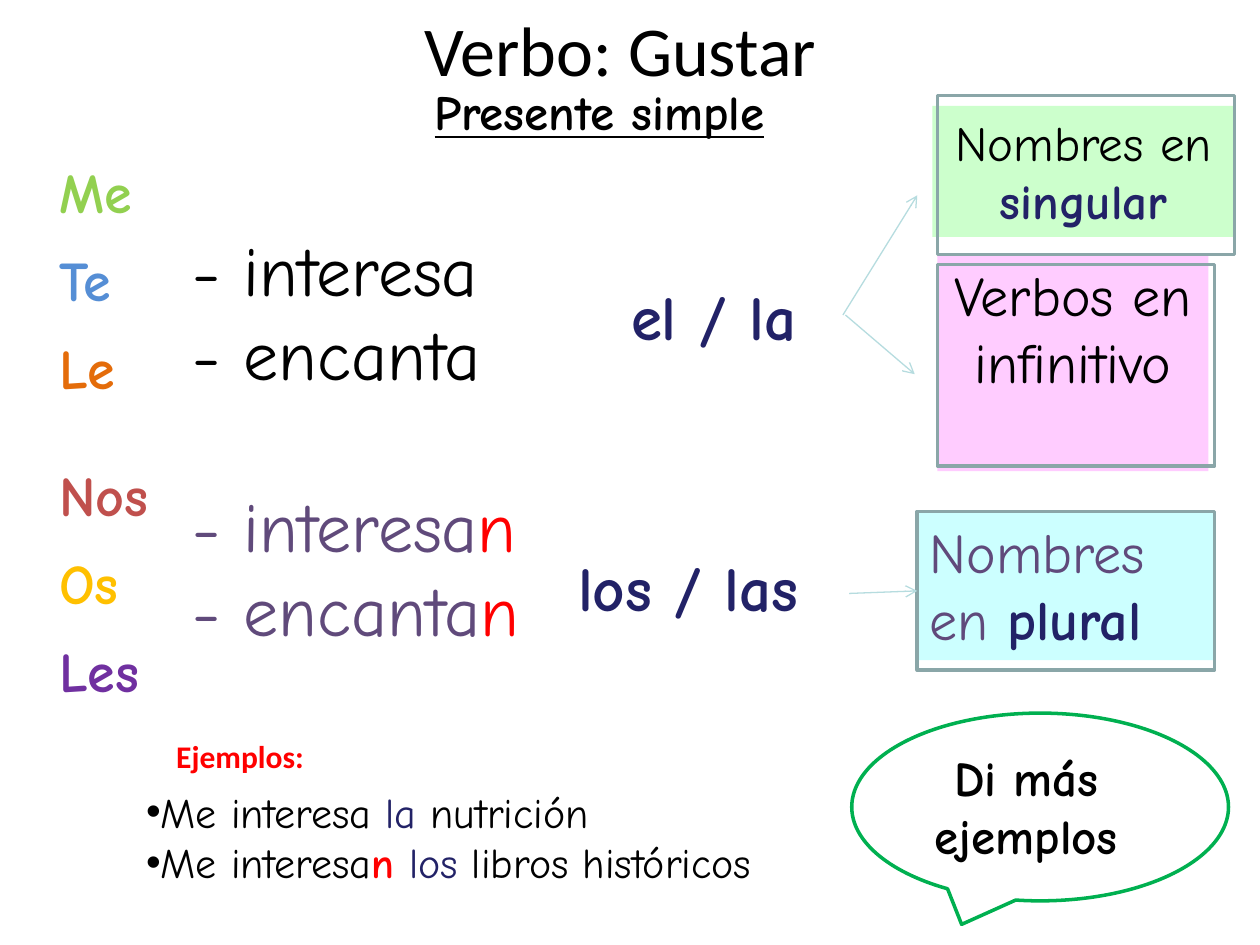
from dataclasses import dataclass

from lxml.etree import SubElement
from pptx import Presentation
from pptx.dml.color import RGBColor
from pptx.enum.shapes import MSO_CONNECTOR, MSO_SHAPE
from pptx.enum.text import MSO_ANCHOR, MSO_AUTO_SIZE, PP_ALIGN
from pptx.oxml.ns import qn
from pptx.util import Inches, Pt


@dataclass(frozen=True)
class Theme:
    heading_font: str = "Calibri"
    body_font: str = "Comic Neue"
    black: str = "000000"
    navy: str = "222267"
    purple: str = "604A7B"
    red: str = "FF0000"
    green: str = "00B050"
    frame: str = "8AA6A8"
    arrow: str = "B6DCDF"
    mint: str = "CCFFCC"
    pink: str = "FFCCFF"
    aqua: str = "CCFFFF"
    display: int = 40
    large: int = 36
    medium: int = 32
    small: int = 28
    example: int = 24
    label: int = 18


class SlideBuilder:
    """Holds the theme and the current slide."""

    def __init__(self, slide, theme):
        self.slide = slide
        self.theme = theme

    def fill_text(self, shape, paragraphs, size, font=None, bold=False,
                  wrap=False, align=PP_ALIGN.LEFT):
        """Each paragraph is a list of (text, colour[, bold]) runs."""
        frame = shape.text_frame
        frame.word_wrap = wrap
        frame.auto_size = MSO_AUTO_SIZE.NONE
        frame.vertical_anchor = MSO_ANCHOR.TOP
        for index, runs in enumerate(paragraphs):
            paragraph = frame.add_paragraph() if index else frame.paragraphs[0]
            paragraph.alignment = align
            paragraph.space_before = Pt(0)
            paragraph.font.name = font or self.theme.body_font
            paragraph.font.size = Pt(size)
            paragraph.font.bold = bold
            for text, color, *strong in runs:
                run = paragraph.add_run()
                run.text = text
                run.font.color.rgb = RGBColor.from_string(color)
                if strong:
                    run.font.bold = strong[0]
        return frame.paragraphs

    def placeholder(self, shape, box, paragraphs, size, **style):
        shape.left, shape.top, shape.width, shape.height = map(Inches, box)
        return self.fill_text(shape, paragraphs, size, **style)

    def text(self, box, paragraphs, size, **style):
        shape = self.slide.shapes.add_textbox(*map(Inches, box))
        return self.fill_text(shape, paragraphs, size, **style)

    def shape(self, box, fill=None, line=None, kind=MSO_SHAPE.RECTANGLE):
        shape = self.slide.shapes.add_shape(kind, *map(Inches, box))
        shape.shadow.inherit = False
        if fill:
            shape.fill.solid()
            shape.fill.fore_color.rgb = RGBColor.from_string(fill)
        else:
            shape.fill.background()
        if line:
            shape.line.color.rgb = RGBColor.from_string(line)
            shape.line.width = Pt(2)
        else:
            shape.line.fill.background()
        return shape

    def card(self, box, fill, runs, size, align=PP_ALIGN.CENTER):
        self.fill_text(self.shape(box, fill), [runs], size, wrap=True, align=align)

    def arrow(self, start, end, target=None):
        connector = self.slide.shapes.add_connector(
            MSO_CONNECTOR.STRAIGHT, *map(Inches, start + end))
        if target is not None:
            connector.end_connect(target, 1)
        connector.line.color.rgb = RGBColor.from_string(self.theme.arrow)
        connector.line.width = Pt(0.75)
        properties = connector._element.spPr
        SubElement(properties.find(qn("a:ln")), qn("a:tailEnd"), type="arrow")
        SubElement(properties, qn("a:effectLst"))


def main():
    presentation = Presentation()
    presentation.slide_width, presentation.slide_height = Inches(10), Inches(7.5)
    slide = presentation.slides.add_slide(presentation.slide_layouts[1])
    theme = Theme()
    builder = SlideBuilder(slide, theme)

    # Title and subtitle
    builder.placeholder(slide.shapes.title, (3.27, 0, 3.47, 0.77),
                        [[("Verbo: Gustar", theme.black)]], theme.display,
                        font=theme.heading_font)
    subtitle = builder.text((3.35, 0.6, 3.15, 0.57),
                            [[("Presente simple", theme.black)]],
                            theme.small, bold=True)
    subtitle[0].font.underline = True

    # Pronouns, with a wider gap between singular and plural
    pronouns = [("Me", "92D050"), ("Te", "558ED5"), ("Le", "E46C0A"),
                ("Nos", "C0504D"), ("Os", "FFC000"), ("Les", "7030A0")]
    lines = builder.text((0.37, 1.2, 1.11, 4.48), [[item] for item in pronouns],
                         theme.medium, bold=True)
    for paragraph in lines:
        paragraph.space_after = Pt(12)
    lines[2].space_after = Pt(34)

    # Verb forms
    verbs = ["- interesa", "- encanta"]
    builder.text((1.43, 1.75, 2.76, 1.45),
                 [[(verb, theme.black)] for verb in verbs], theme.display)
    builder.text((1.43, 3.78, 3.06, 1.45),
                 [[(verb, theme.purple), ("n", theme.red)] for verb in verbs],
                 theme.display)

    # Articles
    for box, articles in [((4.91, 2.15, 1.78, 0.71), "el / la"),
                          ((4.49, 4.3, 2.28, 0.71), "los / las")]:
        builder.text(box, [[(articles, theme.navy)]], theme.large,
                     bold=True, wrap=True)

    # What follows the verb: coloured cards under offset frames
    builder.card((7.4, 0.84, 2.4, 1.04), theme.mint,
                 [("Nombres en ", theme.black), ("singular", theme.navy, True)],
                 theme.small)
    builder.card((7.44, 2.02, 2.15, 1.72), theme.pink,
                 [("Verbos en infinitivo", theme.black)], theme.medium)
    builder.card((7.28, 4.06, 2.36, 1.18), theme.aqua,
                 [("Nombres en ", theme.purple), ("plural", theme.navy, True)],
                 theme.medium, align=PP_ALIGN.LEFT)
    builder.shape((7.44, 0.76, 2.36, 1.26), line=theme.frame)
    builder.shape((7.44, 2.1, 2.2, 1.6), line=theme.frame)
    plural_frame = builder.shape((7.28, 4.06, 2.36, 1.26), line=theme.frame)

    # Arrows from articles to cards
    builder.arrow((6.69, 2.5), (7.28, 1.55))
    builder.arrow((6.71, 2.5), (7.26, 2.97))
    builder.arrow((6.74, 4.71), (7.28, 4.69), plural_frame)

    # Examples
    builder.text((1.3, 5.8, 1.28, 0.4), [[("Ejemplos:", theme.red)]],
                 theme.label, font=theme.heading_font, bold=True)
    examples = builder.placeholder(
        slide.placeholders[1], (1.06, 6.19, 5.65, 0.91),
        [[("Me interesa ", theme.black), ("la ", theme.navy),
          ("nutrición", theme.black)],
         [("Me interesa", theme.black), ("n ", theme.red, True),
          ("los", theme.navy), (" libros históricos", theme.black)]],
        theme.example)
    for paragraph in examples:
        properties = paragraph._p.get_or_add_pPr()
        properties.set("marL", "0")
        properties.set("indent", "0")

    # Speech bubble
    builder.shape((6.76, 5.66, 2.99, 1.49), line=theme.green,
                  kind=MSO_SHAPE.OVAL_CALLOUT)
    builder.text((7.2, 5.88, 1.89, 1.04), [[("Di más ejemplos", theme.black)]],
                 theme.small, bold=True, wrap=True, align=PP_ALIGN.CENTER)

    presentation.save("out.pptx")


if __name__ == "__main__":
    main()
